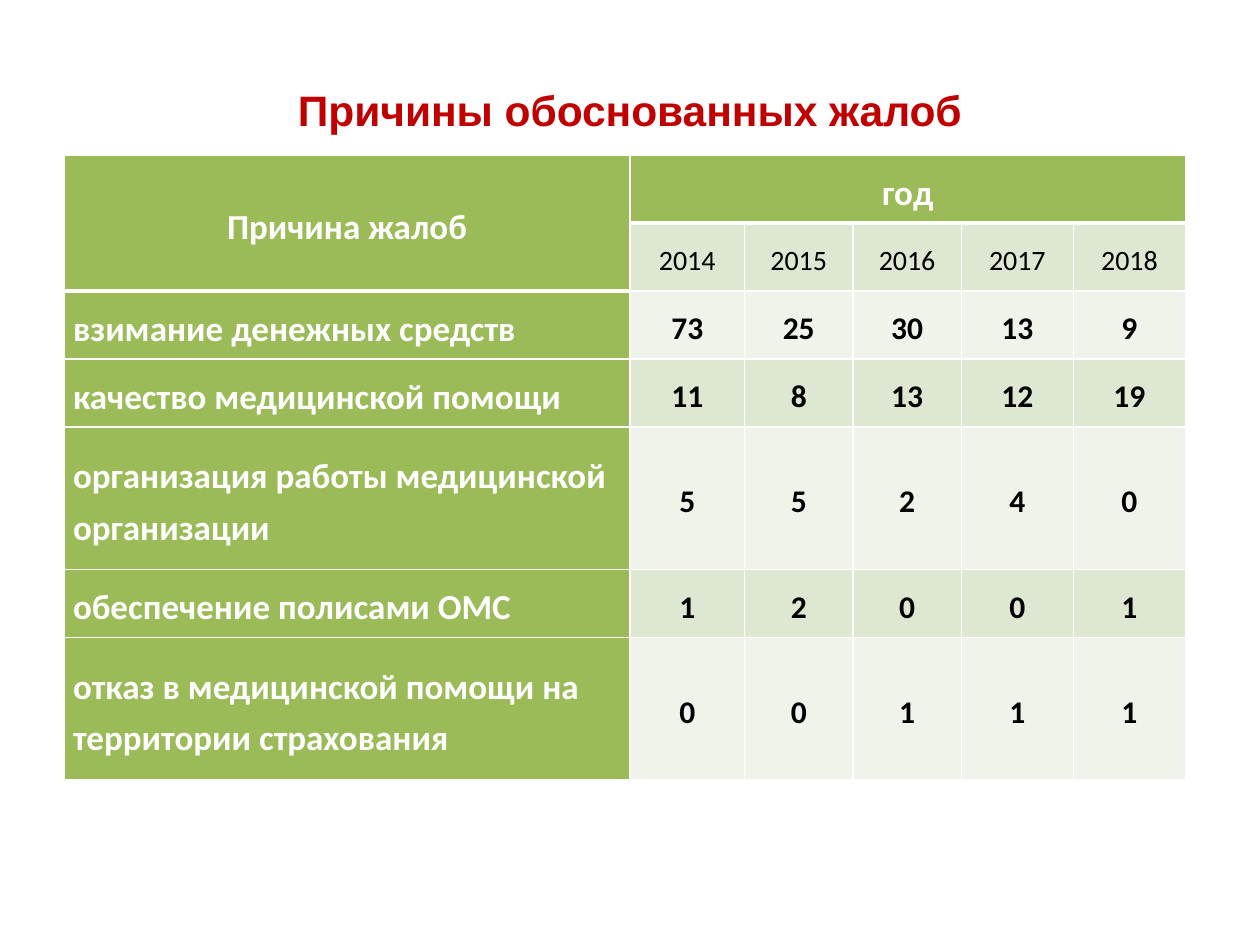
from dataclasses import dataclass

from pptx import Presentation
from pptx import util as u
from pptx.dml.color import RGBColor
from pptx.enum import text
from pptx.oxml import parse_xml
from pptx.oxml.ns import nsdecls


@dataclass(frozen=True)
class Theme:
    title_font: str = "Arial"
    table_font: str = "Calibri"
    title: str = "C00000"
    header: str = "9BBB59"
    bands: tuple = ("EFF3EA", "DEE7D1")
    light: str = "FFFFFF"
    dark: str = "000000"
    title_size: float = 24.3
    label_size: int = 20
    value_size: int = 18
    year_size: int = 16
    thin: int = 1
    thick: int = 3


YEARS = ["2014", "2015", "2016", "2017", "2018"]
COMPLAINTS = [
    ("взимание денежных средств", [73, 25, 30, 13, 9]),
    ("качество медицинской помощи", [11, 8, 13, 12, 19]),
    ("организация работы медицинской организации", [5, 5, 2, 4, 0]),
    ("обеспечение полисами ОМС", [1, 2, 0, 0, 1]),
    ("отказ в медицинской помощи на территории страхования", [0, 0, 1, 1, 1]),
]
COL_WIDTHS = [4.49, 0.91, 0.86, 0.86, 0.89, 0.89]
ROW_HEIGHTS = [0.54, 0.54, 0.54, 0.54, 1.13, 0.54, 1.13]


class SlideBuilder:
    def __init__(self, prs, theme):
        self.theme = theme
        self.s = prs.slides.add_slide(prs.slide_layouts[5])

    def format_paragraph(self, p, font, size, color, bold, align):
        p.alignment = align
        for r in p.runs:
            r.font.name = font
            r.font.size = u.Pt(size)
            r.font.bold = bold
            r.font.color.rgb = RGBColor.from_string(color)

    def title(self, words, left, top, width, height):
        sp = self.s.shapes.title
        sp.left, sp.top = u.Inches(left), u.Inches(top)
        sp.width, sp.height = u.Inches(width), u.Inches(height)
        tf = sp.text_frame
        tf.text = words
        tf.word_wrap = True
        tf.auto_size = text.MSO_AUTO_SIZE.NONE
        tf.vertical_anchor = text.MSO_ANCHOR.BOTTOM
        tf.margin_top = tf.margin_bottom = 0
        self.format_paragraph(tf.paragraphs[0], self.theme.title_font, self.theme.title_size,
                              self.theme.title, True, text.PP_ALIGN.CENTER)

    def borders(self, cell, top, bottom):
        thin = self.theme.thin
        tcPr = cell._tc.get_or_add_tcPr()
        for side, width in (("L", thin), ("R", thin), ("T", top), ("B", bottom)):
            tcPr.append(parse_xml(
                f'<a:ln{side} {nsdecls("a")} w="{u.Pt(width)}"><a:solidFill>'
                f'<a:srgbClr val="{self.theme.light}"/></a:solidFill></a:ln{side}>'))

    def cell(self, cell, words, fill, size, color, bold=True, align=text.PP_ALIGN.CENTER):
        cell.fill.solid()
        cell.fill.fore_color.rgb = RGBColor.from_string(fill)
        cell.vertical_anchor = text.MSO_ANCHOR.MIDDLE
        cell.margin_left = cell.margin_right = u.Inches(0.07)
        cell.margin_top = cell.margin_bottom = 0
        p = cell.text_frame.paragraphs[0]
        p.text = words
        p.line_spacing = 1.2
        self.format_paragraph(p, self.theme.table_font, size, color, bold, align)

    def table(self, left, top):
        t = self.theme
        tbl = self.s.shapes.add_table(
            len(ROW_HEIGHTS), len(COL_WIDTHS), u.Inches(left), u.Inches(top),
            u.Inches(sum(COL_WIDTHS)), u.Inches(sum(ROW_HEIGHTS))).table
        for col, width in zip(tbl.columns, COL_WIDTHS):
            col.width = u.Inches(width)
        for row, height in zip(tbl.rows, ROW_HEIGHTS):
            row.height = u.Inches(height)

        # White grid, thicker below the header cells
        for i in range(len(ROW_HEIGHTS)):
            for j in range(len(COL_WIDTHS)):
                last_header = 1 if j == 0 else 0
                self.borders(tbl.cell(i, j),
                             t.thick if i == last_header + 1 else t.thin,
                             t.thick if i == last_header else t.thin)

        # Merged headers and years
        tbl.cell(0, 0).merge(tbl.cell(1, 0))
        tbl.cell(0, 1).merge(tbl.cell(0, len(YEARS)))
        self.cell(tbl.cell(0, 0), "Причина жалоб", t.header, t.label_size, t.light)
        self.cell(tbl.cell(0, 1), "год", t.header, t.label_size, t.light)
        for j, year in enumerate(YEARS, 1):
            self.cell(tbl.cell(1, j), year, t.bands[1], t.year_size, t.dark, bold=False)

        # Complaint rows
        for i, (reason, values) in enumerate(COMPLAINTS, 2):
            self.cell(tbl.cell(i, 0), reason, t.header, t.label_size, t.light,
                      align=text.PP_ALIGN.LEFT)
            for j, value in enumerate(values, 1):
                self.cell(tbl.cell(i, j), str(value), t.bands[i % 2], t.value_size, t.dark)


def main():
    prs = Presentation()
    prs.slide_width, prs.slide_height = u.Inches(10), u.Inches(7.5)
    slide = SlideBuilder(prs, Theme())
    slide.title("Причины обоснованных жалоб", 0.5, 0.3, 9, 0.77)
    slide.table(0.51, 1.23)
    prs.save("out.pptx")


if __name__ == "__main__":
    main()
